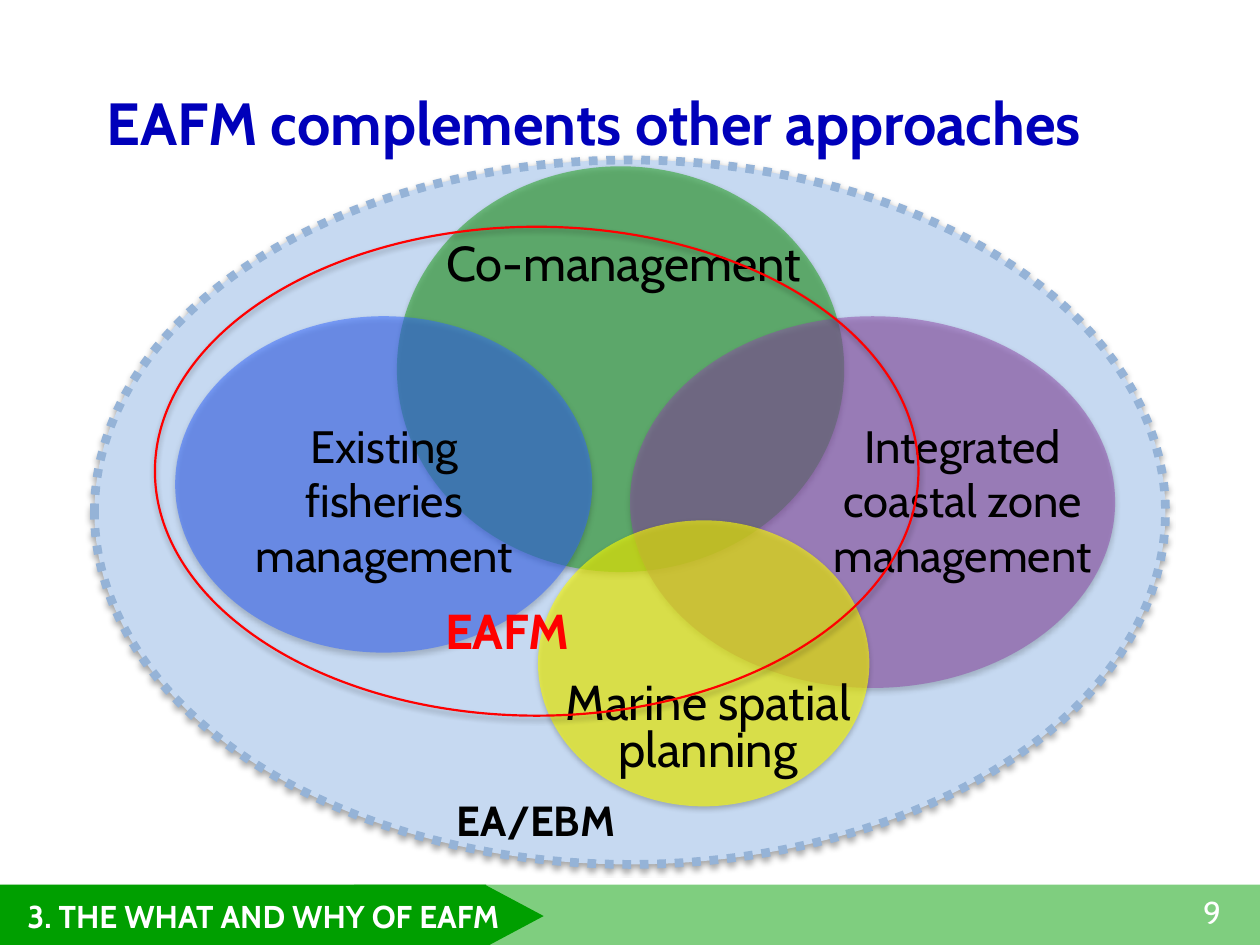
"""Build the slide on how EAFM complements other approaches."""
import collections

import lxml.etree
import pptx
import pptx.dml.color
import pptx.enum.dml
import pptx.enum.shapes
import pptx.enum.text
import pptx.oxml.ns
import pptx.util

COLUMNS, ROWS = 100, 75
WIDTH, HEIGHT = pptx.util.Inches(10), pptx.util.Inches(7.5)
FONT = "Cabin"
COLOURS = {
    "title": "0000BA", "footer": "009F00", "white": "FFFFFF", "black": "000000",
    "ecosystem": "C6D9F1", "ecosystem edge": "95B3D7", "eafm": "FF0000",
    "co-management": "3AA73D", "coastal": "8F4AA9", "marine": "FFFF00", "existing": "3366FF",
}
SHAPES = pptx.enum.shapes.MSO_SHAPE
ALIGN = pptx.enum.text.PP_ALIGN
ANCHOR = pptx.enum.text.MSO_ANCHOR

Box = collections.namedtuple("Box", "left top width height")


def rgb(name):
    """Return the named colour."""
    return pptx.dml.color.RGBColor.from_string(COLOURS[name])


def place(region, part):
    """Turn a part's grid cells within a region into slide lengths."""
    column, row = WIDTH / COLUMNS, HEIGHT / ROWS
    return [round(length) for length in (
        (region.left + part.left) * column, (region.top + part.top) * row,
        part.width * column, part.height * row)]


def add_shadow(figure):
    """Give a shape a soft shadow falling straight down."""
    effects = figure._element.spPr.find(pptx.oxml.ns.qn("a:effectLst"))
    shadow = lxml.etree.SubElement(
        effects, pptx.oxml.ns.qn("a:outerShdw"),
        blurRad="40000", dist="23000", dir="5400000", rotWithShape="0")
    tint = lxml.etree.SubElement(shadow, pptx.oxml.ns.qn("a:srgbClr"), val=COLOURS["black"])
    lxml.etree.SubElement(tint, pptx.oxml.ns.qn("a:alpha"), val="35000")


def add_figure(slide, region, part, preset, fill=None, opacity=100, edge=None,
               edge_format=None, shadow=True, rotation=0):
    """Add a preset shape to a region."""
    figure = slide.shapes.add_shape(preset, *place(region, part))
    figure.rotation = rotation
    figure.shadow.inherit = False
    if shadow:
        add_shadow(figure)
    if fill:
        figure.fill.solid()
        figure.fill.fore_color.rgb = rgb(fill)
        if opacity < 100:
            tint = figure.fill._xPr.find(".//" + pptx.oxml.ns.qn("a:srgbClr"))
            lxml.etree.SubElement(tint, pptx.oxml.ns.qn("a:alpha"), val=str(opacity * 1000))
    else:
        figure.fill.background()
    if edge:
        figure.line.color.rgb = rgb(edge)
        for name, value in edge_format.items():
            setattr(figure.line, name, value)
    else:
        figure.line.fill.background()


def add_label(slide, region, part, words, size, colour="black", bold=False,
              anchor=ANCHOR.TOP, **paragraph_format):
    """Add one paragraph of text to a region."""
    frame = slide.shapes.add_textbox(*place(region, part)).text_frame
    frame.word_wrap = True
    frame.vertical_anchor = anchor
    paragraph = frame.paragraphs[0]
    paragraph.text = words
    for name, value in {"alignment": ALIGN.CENTER, **paragraph_format}.items():
        setattr(paragraph, name, value)
    font_format = {"name": FONT, "size": pptx.util.Pt(size), "bold": bold}
    for run in paragraph.runs:
        run.font.color.rgb = rgb(colour)
        for name, value in font_format.items():
            setattr(run.font, name, value)


def build_footer(slide, region):
    """Draw the chapter arrow, the pale band and the slide number."""
    add_figure(slide, region, Box(0, 0, 38.6, 4.9), SHAPES.RECTANGLE, "footer")
    add_figure(slide, region, Box(28.1, 0, 71.9, 4.9), SHAPES.RECTANGLE, "footer",
               opacity=50, shadow=False)
    add_figure(slide, region, Box(38.4, 0.2, 4.9, 4.6), SHAPES.ISOSCELES_TRIANGLE, "footer",
               shadow=False, rotation=90)
    add_label(slide, region, Box(0, 0.5, 41.8, 4.1), "3. THE WHAT AND WHY OF EAFM",
              18, "white", bold=True)
    add_label(slide, region, Box(94.5, 0.2, 5.5, 4), "9", 18, "white", alignment=ALIGN.LEFT)


def build_title(slide, region):
    """Write the slide title across its region."""
    add_label(slide, region, Box(0, 0, region.width, region.height),
              "EAFM complements other approaches", 34, "title", bold=True,
              anchor=ANCHOR.MIDDLE, alignment=ALIGN.LEFT)


def build_approaches(slide, region):
    """Draw the overlapping approaches inside the ecosystem ellipse."""
    dotted = {"width": pptx.util.Pt(5), "dash_style": pptx.enum.dml.MSO_LINE.ROUND_DOT}
    add_figure(slide, region, Box(0, 0, region.width, region.height), SHAPES.OVAL,
               "ecosystem", edge="ecosystem edge", edge_format=dotted)

    approaches = [
        ("co-management", 64, Box(24, 0.5, 35.5, 32.2)),
        ("coastal", 52, Box(42.5, 12.4, 38.5, 29.5)),
        ("marine", 61, Box(35.2, 28.6, 26.3, 22.7)),
        ("existing", 52, Box(6.4, 12.4, 33.1, 26.7)),
    ]
    for colour, opacity, part in approaches:
        add_figure(slide, region, part, SHAPES.OVAL, colour, opacity)

    labels = [
        ("Co-management", 28, Box(23.2, 5.3, 37.6, 5.7), {}),
        ("Existing\nfisheries\nmanagement", 25.9, Box(4.2, 20, 37.6, 12.7), {}),
        ("Marine spatial planning", 28, Box(35.2, 41, 27, 10.3), {"line_spacing": 0.8}),
        ("EAFM", 28, Box(20.3, 34.5, 24.9, 8.5), {"colour": "eafm", "bold": True}),
        ("Integrated\ncoastal zone\nmanagement", 25.9, Box(52.8, 20, 32.2, 12.7), {}),
    ]
    for words, size, part, label_format in labels:
        add_label(slide, region, part, words, size, **label_format)

    add_figure(slide, region, Box(4.8, 5.3, 60.6, 38.8), SHAPES.OVAL,
               edge="eafm", edge_format={"width": pptx.util.Pt(1.25)})
    add_label(slide, region, Box(22.6, 49.9, 24.9, 8.5), "EA/EBM", 24, bold=True)


def main():
    """Build and save the slide."""
    deck = pptx.Presentation()
    deck.slide_width, deck.slide_height = WIDTH, HEIGHT
    slide = deck.slides.add_slide(deck.slide_layouts[6])
    build_footer(slide, Box(0, 70.2, 100, 4.9))
    build_title(slide, Box(7.5, 5.9, 92.5, 7.5))
    build_approaches(slide, Box(7.5, 12.7, 85, 55.9))
    deck.save("out.pptx")


if __name__ == "__main__":
    main()
